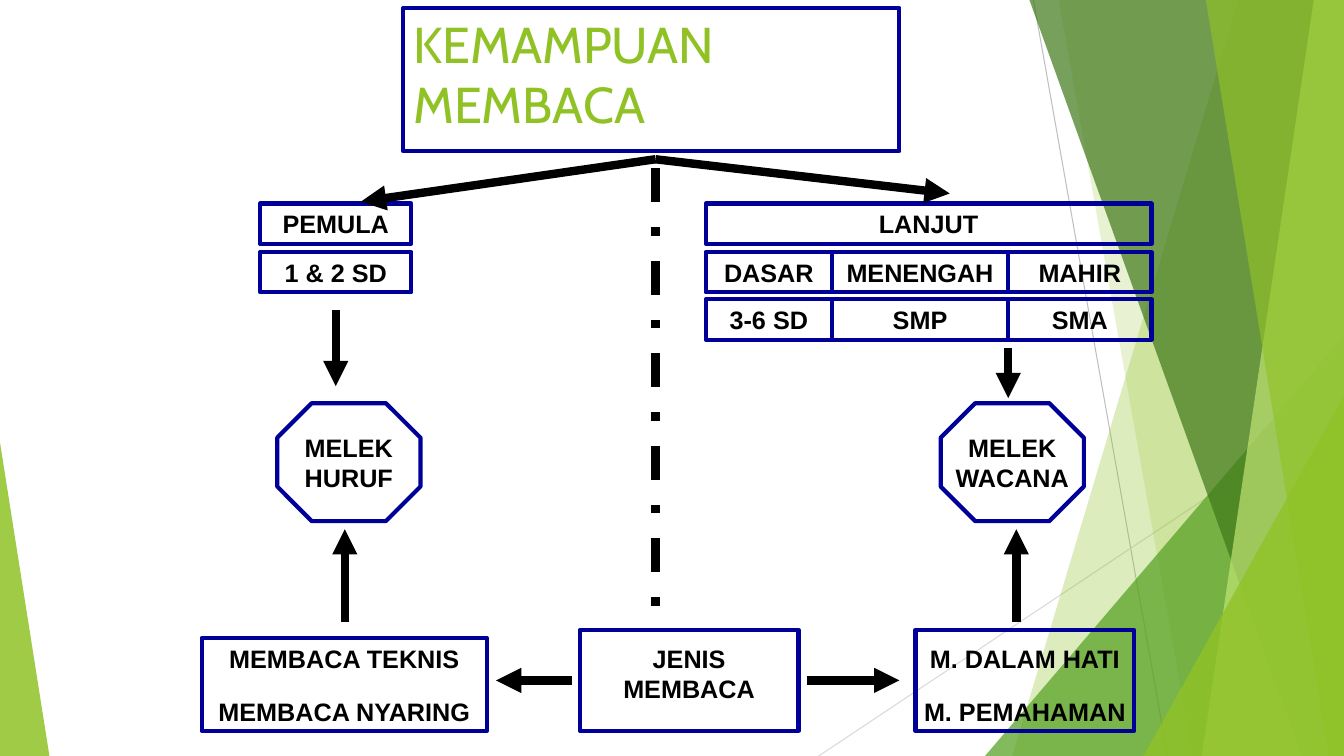
from pptx import Presentation
from pptx import util as u
from pptx.dml.color import RGBColor
from pptx.enum import dml, shapes, text
from pptx.oxml.ns import qn
from lxml import etree

COLOURS = {
    "navy": "000099", "black": "000000", "lime": "90C226", "green": "54A021",
    "forest": "3F7819", "pale": "C0E474", "grey": "BFBFBF", "silver": "D9D9D9",
}
WIDTH, HEIGHT = 13.33, 7.5
RECT, OCTAGON = shapes.MSO_SHAPE.RECTANGLE, shapes.MSO_SHAPE.OCTAGON

deck = Presentation()
deck.slide_width, deck.slide_height = u.Inches(WIDTH), u.Inches(HEIGHT)
page = deck.slides.add_slide(deck.slide_layouts[5])


def draw_line(start, end, colour="black", width=6):
    points = [u.Inches(value) for value in (*start, *end)]
    line = page.shapes.add_connector(shapes.MSO_CONNECTOR.STRAIGHT, *points)
    line.line.color.rgb = RGBColor.from_string(COLOURS[colour])
    line.line.width = u.Pt(width)
    etree.SubElement(line._element.spPr, qn("a:effectLst"))
    return line


def draw_box(kind, place, lines, gap=0, **frame_format):
    box = page.shapes.add_shape(kind, *[u.Inches(value) for value in place])
    box.shadow.inherit = False
    box.fill.background()
    box.line.color.rgb = RGBColor.from_string(COLOURS["navy"])
    box.line.width = u.Pt(3)
    frame = box.text_frame
    settings = {"word_wrap": True, "vertical_anchor": text.MSO_ANCHOR.MIDDLE}
    for name, value in {**settings, **frame_format}.items():
        setattr(frame, name, value)
    for number, words in enumerate(lines):
        para = frame.paragraphs[0] if number == 0 else frame.add_paragraph()
        para.alignment = text.PP_ALIGN.CENTER
        para.space_before = u.Pt(gap if number else 0)
        span = para.add_run()
        span.text = words
        for name, value in {"name": "Arial", "size": u.Pt(18), "bold": True}.items():
            setattr(span.font, name, value)
        span.font.color.rgb = RGBColor.from_string(COLOURS["black"])
    return box


# Background: thin lines
draw_line((10.25, 0), (11.58, HEIGHT), "grey", 0.75)
draw_line((WIDTH, 4.03), (8.12, HEIGHT), "silver", 0.75)

# Background: bands (left edge at top, left edge at bottom) and
# triangles (left, top, width, apex position), with opacity in percent
facets = [
    ("band", (12.28, 10.04), "lime", 30),
    ("band", (10.5, 11.83), "lime", 20),
    ("triangle", (9.77, 3.33, 3.56, 1), "green", 72),
    ("band", (10.21, 12.91), "forest", 70),
    ("band", (13.03, 11.92), "pale", 70),
    ("band", (11.96, 13.18), "lime", 65),
    ("triangle", (11.34, 3.93, 1.99, 1), "lime", 80),
    ("triangle", (0, 4.39, 0.49, 0), "lime", 85),
]
for kind, place, colour, opacity in facets:
    if kind == "band":
        top_x, bottom_x = place
        outline = page.shapes.build_freeform(u.Inches(top_x), 0)
        corners = [(WIDTH, 0), (WIDTH, HEIGHT), (bottom_x, HEIGHT)]
        outline.add_line_segments([(u.Inches(x), u.Inches(y)) for x, y in corners])
        facet = outline.convert_to_shape()
    else:
        left, top, width, apex = place
        facet = page.shapes.add_shape(
            shapes.MSO_SHAPE.ISOSCELES_TRIANGLE, u.Inches(left), u.Inches(top),
            u.Inches(width), u.Inches(HEIGHT - top))
        facet.adjustments[0] = apex
    facet.shadow.inherit = False
    facet.line.fill.background()
    facet.fill.solid()
    facet.fill.fore_color.rgb = RGBColor.from_string(COLOURS[colour])
    tint = facet._element.spPr.find(qn("a:solidFill"))[0]
    etree.SubElement(tint, qn("a:alpha"), val=str(opacity * 1000))

# Title
title = page.shapes.title
title_place = {"left": 4, "top": 0.08, "width": 4.92, "height": 1.42}
for name, value in title_place.items():
    setattr(title, name, u.Inches(value))
title.line.color.rgb = RGBColor.from_string(COLOURS["navy"])
title.line.width = u.Pt(3)
title_format = {"text": "KEMAMPUAN\vMEMBACA", "word_wrap": True,
                "auto_size": text.MSO_AUTO_SIZE.NONE,
                "vertical_anchor": text.MSO_ANCHOR.TOP}
for name, value in title_format.items():
    setattr(title.text_frame, name, value)
para = title.text_frame.paragraphs[0]
para.alignment = text.PP_ALIGN.LEFT
for span in para.runs:
    span.font.name, span.font.size = "Cabin", u.Pt(36)
    span.font.color.rgb = RGBColor.from_string(COLOURS["lime"])

# Reading levels: rows of adjoining cells (left, width, words)
level_rows = [
    (2.02, [(2.58, 1.5, "PEMULA"), (7, 4.42, "LANJUT")]),
    (2.5, [(2.58, 1.5, "1 & 2 SD"), (7, 1.25, "DASAR"),
           (8.25, 1.75, "MENENGAH"), (10, 1.42, "MAHIR")]),
    (2.97, [(7, 1.25, "3-6 SD"), (8.25, 1.75, "SMP"), (10, 1.42, "SMA")]),
]
for top, cells in level_rows:
    for left, width, words in cells:
        draw_box(RECT, (left, top, width, 0.4), [words])

# Literacy outcomes
for left, words in [(2.75, "HURUF"), (9.33, "WACANA")]:
    draw_box(OCTAGON, (left, 4, 1.42, 1.17), ["MELEK", words], word_wrap=False)

# Kinds of reading: the first text line shares one height
kinds = [
    (2, 6.33, 2.83, 0.05, ["MEMBACA TEKNIS", "MEMBACA NYARING"]),
    (9.08, 6.25, 2.17, 0.05, ["M. DALAM HATI", "M. PEMAHAMAN"]),
    (5.75, 6.25, 2.17, 0.35, ["JENIS MEMBACA"]),
]
for left, top, width, inset, lines in kinds:
    draw_box(RECT, (left, top, width, 7.25 - top), lines, gap=16.5,
             vertical_anchor=text.MSO_ANCHOR.TOP, margin_top=u.Inches(6.38 - top),
             margin_left=u.Inches(inset), margin_right=u.Inches(inset))

# Arrows
arrows = [
    ((6.5, 1.58), (3.58, 2)), ((6.5, 1.58), (9.42, 1.92)),
    ((3.33, 3.08), (3.33, 3.83)), ((3.42, 6.17), (3.42, 5.25)),
    ((10.08, 6.17), (10.08, 5.25)), ((10, 3.45), (10, 3.95)),
    ((5.67, 6.75), (4.92, 6.75)), ((8, 6.75), (8.92, 6.75)),
]
for start, end in arrows:
    arrow = draw_line(start, end)
    etree.SubElement(arrow.line._get_or_add_ln(), qn("a:tailEnd"), type="triangle")

# Divider between beginners and advanced readers
divider = draw_line((6.5, 1.67), (6.5, 6.25))
divider.line.dash_style = dml.MSO_LINE.DASH_DOT

deck.save("out.pptx")
